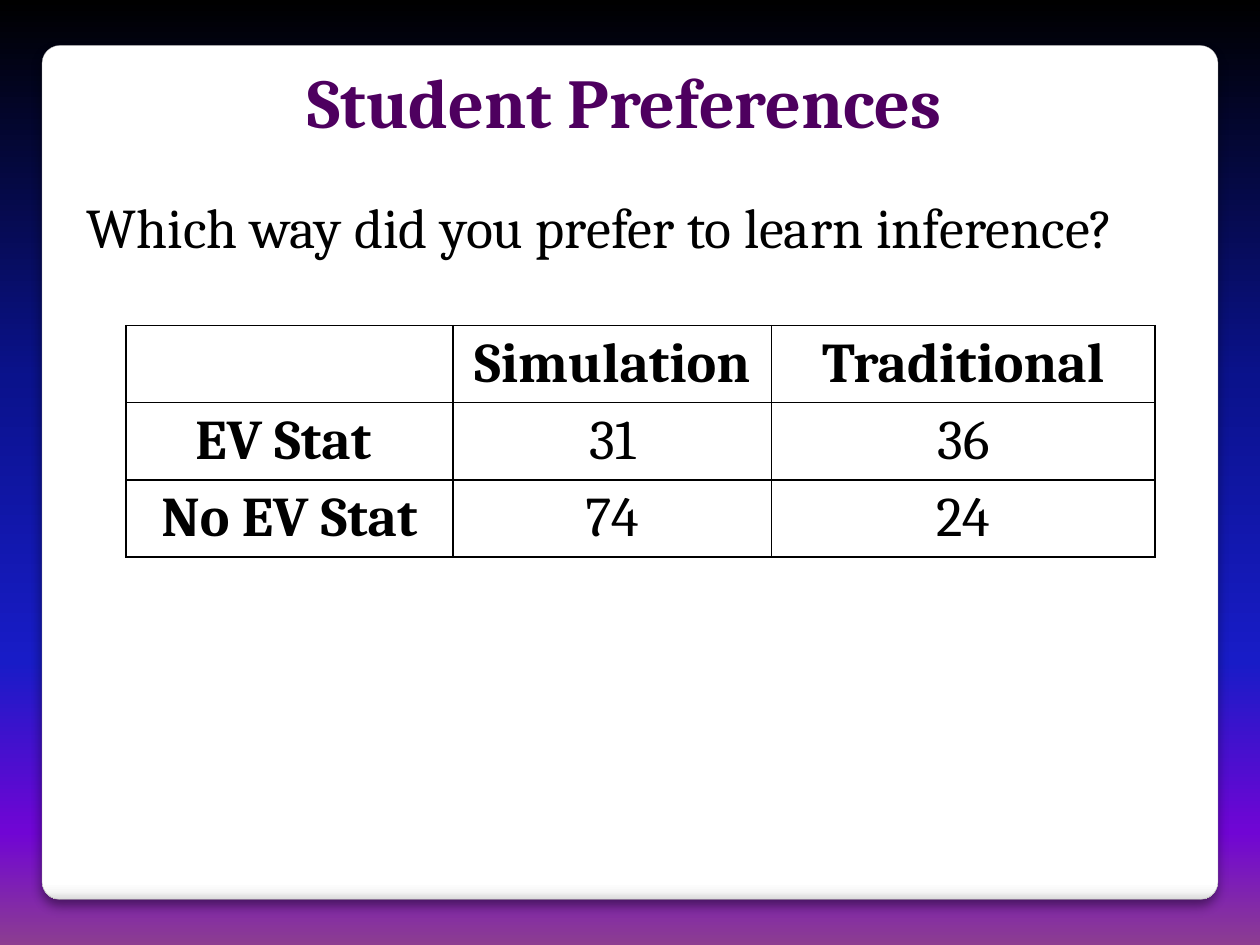
from dataclasses import dataclass
from typing import NamedTuple

from lxml import etree
from pptx import Presentation
from pptx.dml.color import RGBColor
from pptx.enum.shapes import MSO_SHAPE
from pptx.enum.text import MSO_ANCHOR, MSO_AUTO_SIZE, PP_ALIGN
from pptx.oxml import parse_xml
from pptx.oxml.ns import nsdecls, qn
from pptx.util import Pt

CENTER, LEFT = PP_ALIGN.CENTER, PP_ALIGN.LEFT
TOP, NO_FIT = MSO_ANCHOR.TOP, MSO_AUTO_SIZE.NONE
ROUND = MSO_SHAPE.ROUNDED_RECTANGLE


class Box(NamedTuple):
    left: float
    top: float
    width: float
    height: float


class Stop(NamedTuple):
    pos: int
    color: str


@dataclass(frozen=True)
class Theme:
    font: str = "Cambria"
    title: str = "4E005F"
    ink: str = "000000"
    paper: str = "FFFFFF"
    edge: str = "A4A4A4"
    head_size: int = 40
    text_size: int = 32
    back: tuple = (Stop(0, "000000"), Stop(40, "0A128C"), Stop(70, "181CC7"),
                   Stop(88, "7005D4"), Stop(100, "8C3D91"))
    panel: tuple = (Stop(0, "FFFFFF"), Stop(98, "FFFFFF"),
                    Stop(99, "F7F7F7"), Stop(100, "DADADA"))


@dataclass(frozen=True)
class Cell:
    text: str
    bold: bool = False


THEME = Theme()
PANEL = Box(24, 26, 672, 488)
TITLE = Box(36, 30, 642, 96)
QUERY = Box(36, 106.5, 642, 46)
GRID = Box(72, 186, 588, 132)
COLS = (187, 182, 219)
ROWS = (
    (Cell(""), Cell("Simulation", True), Cell("Traditional", True)),
    (Cell("EV Stat ", True), Cell("31"), Cell("36")),
    (Cell("No EV Stat", True), Cell("74"), Cell("24")),
)


def paint(fill, root, stops: tuple) -> None:
    """Fill from top to bottom with any number of colour stops."""
    fill.gradient()
    fill.gradient_angle = 270
    group = next(root.iter(qn("a:gsLst")))
    for old in list(group):
        group.remove(old)
    for stop in stops:
        mark = etree.SubElement(group, qn("a:gs"), pos=str(stop.pos * 1000))
        etree.SubElement(mark, qn("a:srgbClr"), val=stop.color)


def write(para, text: str, size: int, color: str, bold: bool, align) -> None:
    para.alignment = align
    run = para.add_run()
    run.text = text
    font = run.font
    font.name, font.size, font.bold = THEME.font, Pt(size), bold
    font.color.rgb = RGBColor.from_string(color)


def place(shape, box: Box):
    """Move a placeholder and return its first paragraph."""
    shape.left, shape.top, shape.width, shape.height = map(Pt, box)
    frame = shape.text_frame
    frame.word_wrap = True
    frame.auto_size = NO_FIT
    frame.vertical_anchor = TOP
    return frame.paragraphs[0]


def draw_panel(slide) -> None:
    panel = slide.shapes.add_shape(ROUND, *map(Pt, PANEL))
    panel.adjustments[0] = 0.021
    paint(panel.fill, panel._element, THEME.panel)
    panel.line.color.rgb = RGBColor.from_string(THEME.edge)
    panel.line.width = Pt(0.16)
    panel._element.spPr.append(parse_xml(
        f'<a:effectLst {nsdecls("a")}><a:outerShdw blurRad="{Pt(6)}" '
        f'dist="{Pt(4)}" dir="5400000" algn="t" rotWithShape="0">'
        f'<a:srgbClr val="{THEME.ink}"><a:alpha val="44000"/></a:srgbClr>'
        '</a:outerShdw></a:effectLst>'))
    # Behind the placeholders
    slide.shapes._spTree.insert(2, panel._element)


def draw_cell(cell, item: Cell) -> None:
    cell.fill.solid()
    cell.fill.fore_color.rgb = RGBColor.from_string(THEME.paper)
    for spot, side in enumerate(("lnL", "lnR", "lnT", "lnB")):
        cell._tc.tcPr.insert(spot, parse_xml(
            f'<a:{side} {nsdecls("a")} w="{Pt(1)}"><a:solidFill>'
            f'<a:srgbClr val="{THEME.ink}"/></a:solidFill></a:{side}>'))
    if item.text:
        write(cell.text_frame.paragraphs[0], item.text, THEME.text_size,
              THEME.ink, item.bold, CENTER)


def draw_table(slide) -> None:
    table = slide.shapes.add_table(len(ROWS), len(COLS), *map(Pt, GRID)).table
    table.first_row = table.horz_banding = False
    for col, width in zip(table.columns, COLS):
        col.width = Pt(width)
    for row, items in zip(table.rows, ROWS):
        row.height = Pt(GRID.height / len(ROWS))
        for cell, item in zip(row.cells, items):
            draw_cell(cell, item)


def main() -> None:
    deck = Presentation()
    deck.slide_width, deck.slide_height = Pt(720), Pt(540)
    slide = deck.slides.add_slide(deck.slide_layouts[1])

    # Backdrop
    paint(slide.background.fill, slide._element, THEME.back)
    draw_panel(slide)

    # Title
    para = place(slide.shapes.title, TITLE)
    write(para, "Student Preferences", THEME.head_size, THEME.title, True, CENTER)

    # Question, without a bullet
    para = place(slide.placeholders[1], QUERY)
    para.space_before, para.space_after = Pt(0), Pt(18)
    props = para._p.get_or_add_pPr()
    props.set("marL", str(Pt(6.5)))
    props.set("indent", "0")
    etree.SubElement(props, qn("a:buNone"))
    write(para, "Which way did you prefer to learn inference?",
          THEME.text_size, THEME.ink, False, LEFT)

    # Counts
    draw_table(slide)
    deck.save("out.pptx")


if __name__ == "__main__":
    main()
